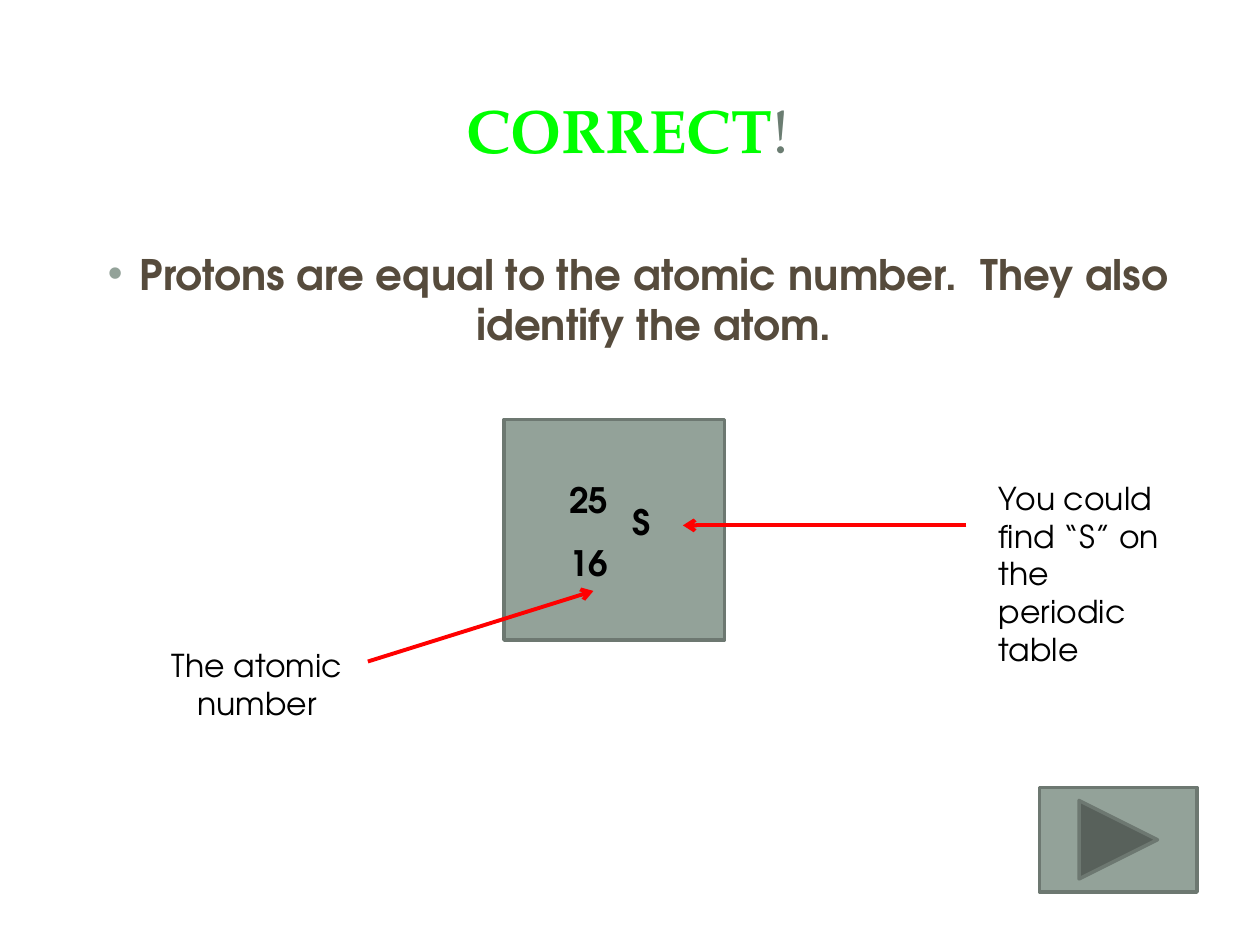
from lxml import etree
from pptx import Presentation
from pptx.dml.color import RGBColor
from pptx.enum import shapes as kinds, text as te
from pptx.oxml import ns
from pptx.util import Inches, Pt

SANS, SERIF = "TeX Gyre Adventor", "TeX Gyre Pagella"
SAGE, EDGE, BLACK, RED = "93A299", "6D7871", "000000", "FF0000"
LEFT, MID = te.PP_ALIGN.LEFT, te.PP_ALIGN.CENTER

TITLE = [
    ("CORRECT", dict(name=SERIF, size=35, bold=True, color="00FF00")),
    ("!", dict(name=SERIF, size=35, bold=False, color="6B7D72")),
]
FACT = "Protons are equal to the atomic number.  They also identify the atom."
FACT_FONT = dict(name=SANS, size=24, bold=True, color="564B3C")
CELL_FONT = dict(name=SANS, size=20, bold=True, color=BLACK)
NOTE_FONT = dict(name=SANS, size=18, bold=False, color=BLACK)
CELL = [
    ("S", (4.92, 3.92, 0.67, 0.44)),
    ("25", (4.42, 3.75, 0.58, 0.44)),
    ("16", (4.42, 4.25, 0.58, 0.44)),
]
NOTES = [
    ("You could find “S” on the periodic table", (7.83, 3.75, 1.58, 1.62), LEFT),
    ("The atomic number", (1.25, 5.08, 1.58, 0.71), MID),
]
ARROWS = [(7.67, 4.17, 5.42, 4.17), (2.92, 5.25, 4.71, 4.69)]


def rgb(code):
    return RGBColor.from_string(code)


def inch(nums):
    return [Inches(n) for n in nums]


def add_run(para, words, style):
    run = para.add_run()
    run.text = words
    for key, val in style.items():
        if key == "color":
            run.font.color.rgb = rgb(val)
        else:
            setattr(run.font, key, Pt(val) if key == "size" else val)


def add_text(home, words, box, style, align=LEFT):
    frame = home.add_textbox(*inch(box)).text_frame
    frame.word_wrap = True
    para = frame.paragraphs[0]
    para.alignment = align
    add_run(para, words, style)
    return para


def add_box(home, kind, box):
    shape = home.add_shape(kind, *inch(box))
    shape.shadow.inherit = False
    shape.fill.solid()
    shape.fill.fore_color.rgb = rgb(SAGE)
    shape.line.color.rgb = rgb(EDGE)
    shape.line.width = Pt(2)


def add_arrow(home, ends):
    line = home.add_connector(kinds.MSO_CONNECTOR.STRAIGHT, *inch(ends))
    line.line.color.rgb = rgb(RED)
    line.line.width = Pt(2.25)
    etree.SubElement(line.line._get_or_add_ln(), ns.qn("a:tailEnd"), type="arrow")
    etree.SubElement(line._element.spPr, ns.qn("a:effectLst"))


def add_bullet(para, mark, color):
    props = para._p.get_or_add_pPr()
    props.set("marL", str(Inches(0.38)))
    props.set("indent", str(Inches(-0.25)))
    tint = etree.SubElement(props, ns.qn("a:buClr"))
    etree.SubElement(tint, ns.qn("a:srgbClr"), val=color)
    etree.SubElement(props, ns.qn("a:buFont"), typeface="Arial")
    etree.SubElement(props, ns.qn("a:buChar"), char=mark)


def main():
    deck = Presentation()
    deck.slide_width, deck.slide_height = inch((10, 7.5))
    slide = deck.slides.add_slide(deck.slide_layouts[5])
    parts = slide.shapes

    title = parts.title
    place = zip(("left", "top", "width", "height"), inch((0.47, 0.45, 9.03, 1.14)))
    for key, val in place:
        setattr(title, key, val)
    title.text_frame.vertical_anchor = te.MSO_ANCHOR.MIDDLE
    head = title.text_frame.paragraphs[0]
    head.alignment = MID
    for words, style in TITLE:
        add_run(head, words, style)

    button = kinds.MSO_SHAPE.ACTION_BUTTON_FORWARD_OR_NEXT
    add_box(parts, button, (8.25, 6.25, 1.25, 0.83))
    fact = add_text(parts, FACT, (0.5, 1.92, 9, 4.78), FACT_FONT, MID)
    add_bullet(fact, "•", SAGE)

    group = parts.add_group_shape().shapes
    add_box(group, kinds.MSO_SHAPE.RECTANGLE, (4, 3.33, 1.75, 1.75))
    for words, box in CELL:
        add_text(group, words, box, CELL_FONT)
    for words, box, align in NOTES:
        add_text(parts, words, box, NOTE_FONT, align)
    for ends in ARROWS:
        add_arrow(parts, ends)

    deck.save("out.pptx")


if __name__ == "__main__":
    main()
